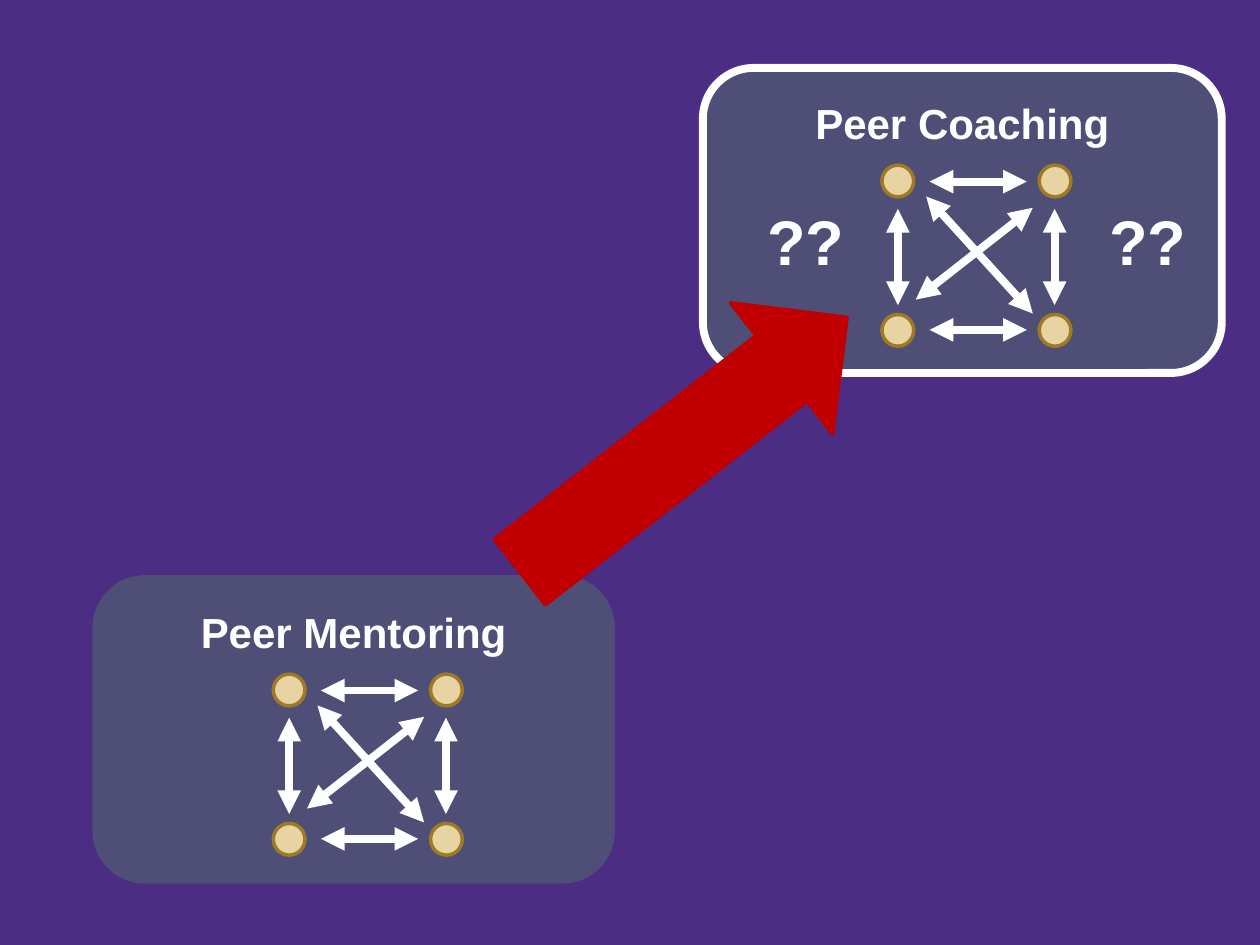
"""Build a slide showing the step from peer mentoring to peer coaching."""
from dataclasses import dataclass
from itertools import product

from lxml.etree import SubElement
from pptx import Presentation
from pptx.dml.color import RGBColor as RGB
from pptx.enum.shapes import MSO_CONNECTOR as CONN, MSO_SHAPE as SHAPE
from pptx.enum.text import MSO_ANCHOR as ANCHOR, MSO_AUTO_SIZE as AUTO, PP_ALIGN as ALIGN
from pptx.oxml.ns import qn
from pptx.util import Cm, Pt


@dataclass(frozen=True)
class Theme:
    font: str = "Arial"
    background: RGB = RGB.from_string("4B2E83")
    card: RGB = RGB.from_string("4E4E76")
    white: RGB = RGB.from_string("FFFFFF")
    node: RGB = RGB.from_string("E8D3A2")
    node_line: RGB = RGB.from_string("9E7A27")
    step: RGB = RGB.from_string("C00000")
    title: Pt = Pt(24)
    question: Pt = Pt(36)
    thin: Pt = Pt(2)
    thick: Pt = Pt(4.5)


theme = Theme()


def add_box(shapes, kind, x, y, w, h, fill, line, width):
    sp = shapes.add_shape(kind, Cm(x), Cm(y), Cm(w), Cm(h))
    sp.shadow.inherit = False
    sp.fill.solid()
    sp.fill.fore_color.rgb = fill
    sp.line.color.rgb = line
    sp.line.width = width
    return sp


def write(tf, text, size):
    p = tf.paragraphs[0]
    p.alignment = ALIGN.CENTER
    r = p.add_run()
    r.text = text
    r.font.name = theme.font
    r.font.size = size
    r.font.bold = True
    r.font.color.rgb = theme.white


prs = Presentation()
prs.slide_width, prs.slide_height = Cm(25.4), Cm(19.05)
s = prs.slides.add_slide(prs.slide_layouts[6])
s.background.fill.solid()
s.background.fill.fore_color.rgb = theme.background

cards = [
    ("Peer Mentoring", 1.9, 11.63, theme.card, theme.thin),
    ("Peer Coaching", 14.17, 1.37, theme.white, theme.thick),
]
node_size = 0.64
node_grid = list(product((3.61, 6.78), (1.96, 4.97)))
links = [
    (4.57, 2.29, 6.53, 2.29),
    (4.57, 5.28, 6.53, 5.28),
    (3.93, 4.78, 3.93, 2.84),
    (7.09, 2.84, 7.09, 4.78),
    (4.29, 4.67, 6.65, 2.82),
    (4.5, 2.59, 6.65, 4.95),
]

for title, x, y, line, width in cards:
    card = add_box(s.shapes, SHAPE.ROUNDED_RECTANGLE, x, y, 10.46, 6.15, theme.card, line, width)
    tf = card.text_frame
    tf.word_wrap = True
    tf.vertical_anchor = ANCHOR.TOP
    tf.margin_top = Cm(0.3)
    write(tf, title, theme.title)

    network = s.shapes.add_group_shape().shapes
    for dx, dy in node_grid:
        add_box(network, SHAPE.OVAL, x + dx, y + dy, node_size, node_size,
                theme.node, theme.node_line, theme.thin)
    for x1, y1, x2, y2 in links:
        link = network.add_connector(CONN.STRAIGHT, Cm(x + x1), Cm(y + y1), Cm(x + x2), Cm(y + y2))
        link.line.color.rgb = theme.white
        link.line.width = theme.thick
        ln = link.line._get_or_add_ln()
        for end in ("a:headEnd", "a:tailEnd"):
            SubElement(ln, qn(end), type="triangle")
        SubElement(link._element.spPr, qn("a:effectLst"))

for x in (15.21, 22.1):
    question = s.shapes.add_textbox(Cm(x), Cm(3.96), Cm(2.08), Cm(1.8))
    tf = question.text_frame
    tf.word_wrap = False
    tf.auto_size = AUTO.SHAPE_TO_FIT_TEXT
    write(tf, "??", theme.question)

step = add_box(s.shapes, SHAPE.RIGHT_ARROW, 9.6, 7.29, 8.36, 3.35,
               theme.step, theme.step, theme.thin)
step.rotation = 322.1

prs.save("out.pptx")
